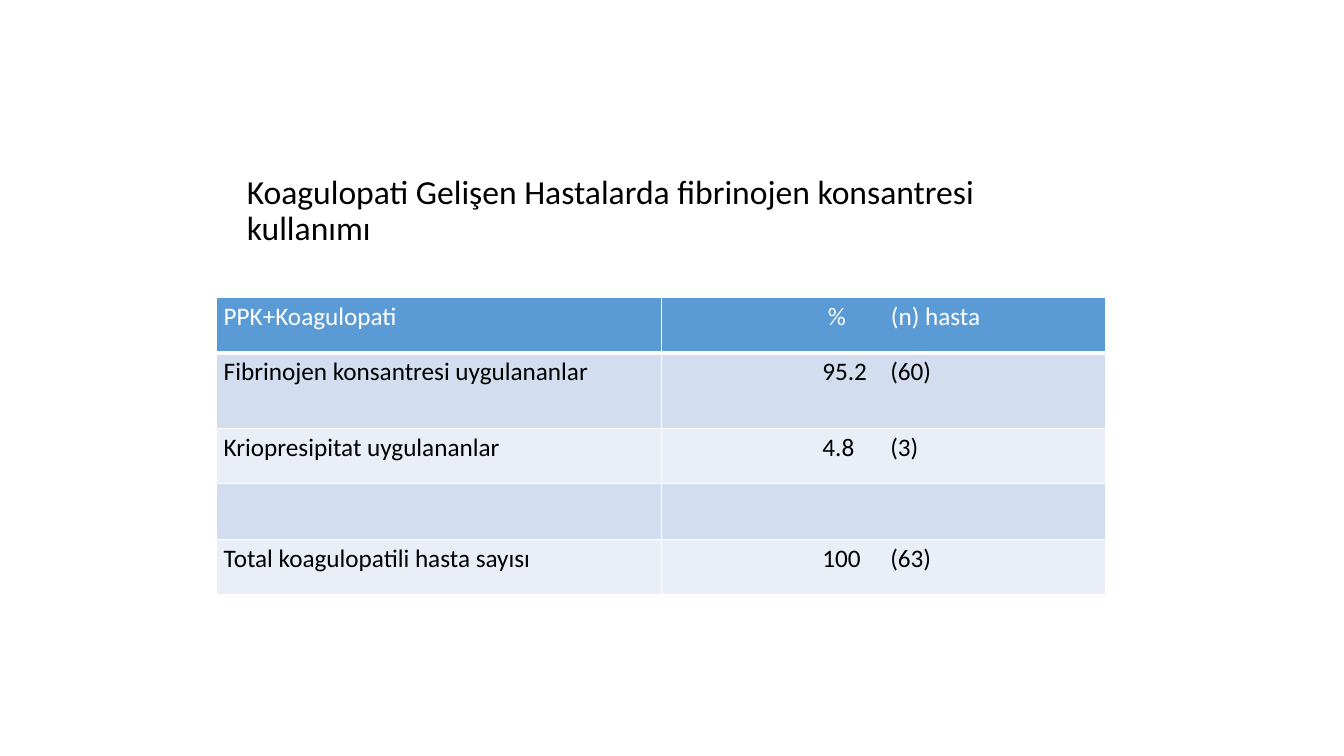
"""Build a slide with a table on fibrinogen concentrate use in coagulopathy."""
import pptx
import pptx.dml.color
import pptx.enum.text
import pptx.oxml.ns
import pptx.util
from lxml import etree

Pt = pptx.util.Pt
RGBColor = pptx.dml.color.RGBColor
qn = pptx.oxml.ns.qn

WHITE = RGBColor(0xFF, 0xFF, 0xFF)
BLACK = RGBColor(0x00, 0x00, 0x00)
HEADER_BLUE = RGBColor(0x5B, 0x9B, 0xD5)
BANDS = (RGBColor(0xD2, 0xDE, 0xEF), RGBColor(0xEA, 0xEF, 0xF7))

TITLE = "Koagulopati Gelişen Hastalarda fibrinojen konsantresi kullanımı"
ROWS = [
    ("PPK+Koagulopati", "\t%\t(n) hasta"),
    ("Fibrinojen konsantresi uygulananlar", "\t95.2\t(60)"),
    ("Kriopresipitat uygulananlar", "\t4.8\t(3)"),
    ("", ""),
    ("Total koagulopatili hasta sayısı", "\t100\t(63)"),
]
ROW_HEIGHTS = (39.6, 54, 39.6, 39.6, 39.6)
COLUMN_WIDTH = 317.6
HEADER_TABS = (114, 159)
VALUE_TABS = (110, 158.5)


def write(frame, text, size=18, color=BLACK, spacing=None, tabs=()):
    para = frame.paragraphs[0]
    para.font.size = Pt(size)
    if spacing:
        para.line_spacing = spacing
    if tabs:
        stops = etree.SubElement(para._p.get_or_add_pPr(), qn("a:tabLst"))
        for position in tabs:
            etree.SubElement(stops, qn("a:tab"), pos=str(Pt(position)), algn="l")
    if text:
        span = para.add_run()
        span.text = text
        span.font.name = "Calibri"
        span.font.size = Pt(size)
        span.font.bold = False
        span.font.color.rgb = color


class Slide:
    def __init__(self, deck):
        self.page = deck.slides.add_slide(deck.slide_layouts[6])
        self.border = WHITE

    def title(self, text, left, top, width, height):
        box = self.page.shapes.add_textbox(Pt(left), Pt(top), Pt(width), Pt(height))
        frame = box.text_frame
        frame.word_wrap = True
        frame.vertical_anchor = pptx.enum.text.MSO_ANCHOR.MIDDLE
        write(frame, text, size=24, spacing=0.9)

    def edges(self, cell, bottom):
        properties = cell._tc.get_or_add_tcPr()
        for side, width in (("L", 1), ("R", 1), ("T", 1), ("B", bottom)):
            line = etree.SubElement(properties, qn(f"a:ln{side}"), w=str(Pt(width)))
            fill = etree.SubElement(line, qn("a:solidFill"))
            etree.SubElement(fill, qn("a:srgbClr"), val=str(self.border))

    def cell(self, cell, text, fill, color, tabs, bottom):
        cell.margin_left = cell.margin_right = Pt(5.04)
        cell.margin_top = cell.margin_bottom = Pt(2.88)
        self.edges(cell, bottom)
        cell.fill.solid()
        cell.fill.fore_color.rgb = fill
        write(cell.text_frame, text, color=color, tabs=tabs)

    def table(self, rows, heights, column_width, left, top):
        columns = len(rows[0])
        grid = self.page.shapes.add_table(
            len(rows), columns, Pt(left), Pt(top),
            Pt(column_width * columns), Pt(sum(heights))).table
        for column in grid.columns:
            column.width = Pt(column_width)
        for i, (texts, height) in enumerate(zip(rows, heights)):
            grid.rows[i].height = Pt(height)
            header = i == 0
            fill = HEADER_BLUE if header else BANDS[(i - 1) % 2]
            for j, text in enumerate(texts):
                stops = HEADER_TABS if header else VALUE_TABS
                self.cell(grid.cell(i, j), text, fill,
                          color=WHITE if header else BLACK,
                          tabs=stops if "\t" in text else (),
                          bottom=3 if header else 1)


def main():
    deck = pptx.Presentation()
    deck.slide_width = Pt(960)
    deck.slide_height = Pt(540)
    slide = Slide(deck)
    slide.title(TITLE, left=169.2, top=89.3, width=620.6, height=123.8)
    slide.table(ROWS, ROW_HEIGHTS, COLUMN_WIDTH, left=154.8, top=212.4)
    deck.save("out.pptx")


if __name__ == "__main__":
    main()
